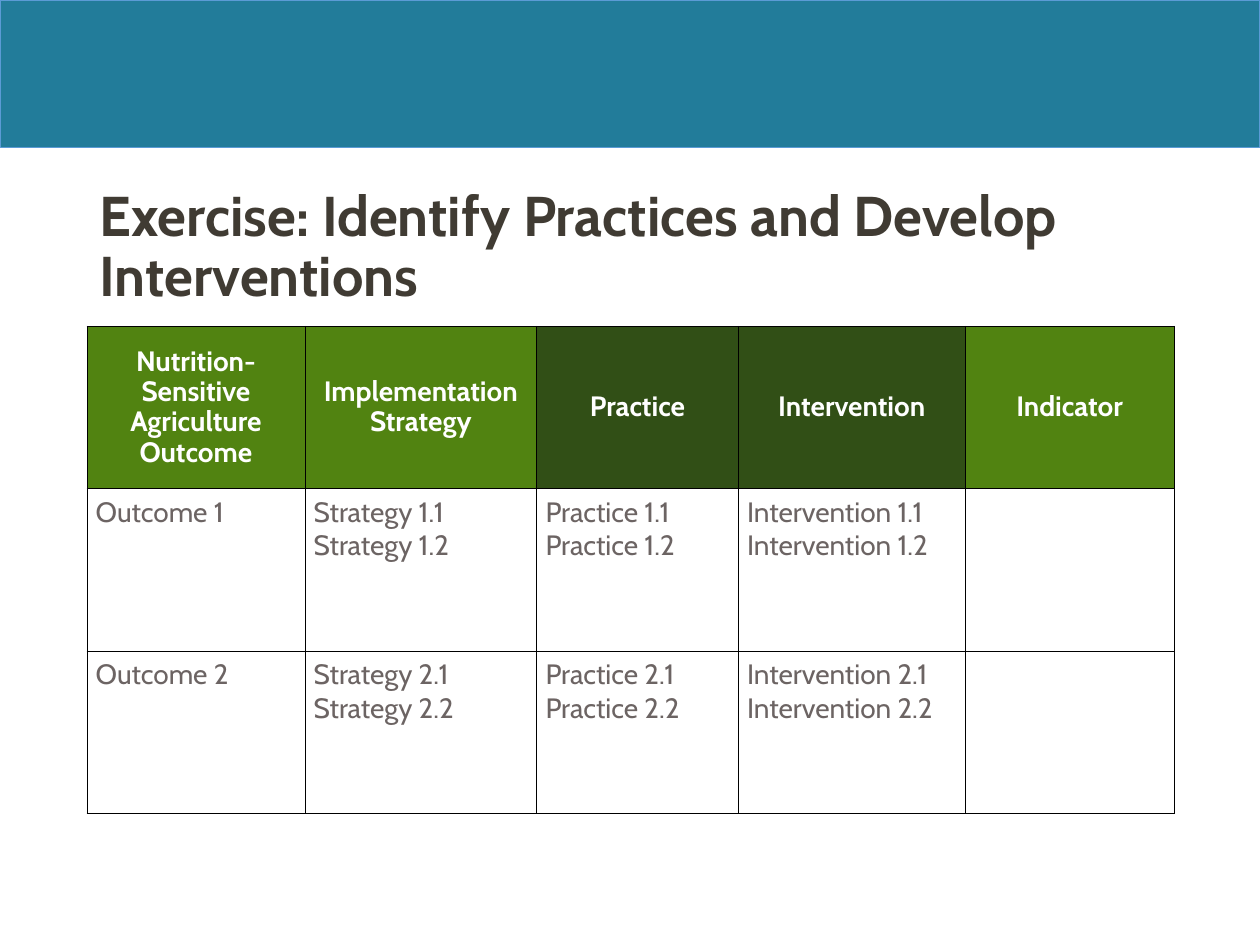
from lxml import etree
from pptx import Presentation
from pptx.dml.color import RGBColor
from pptx.enum.shapes import MSO_SHAPE
from pptx.enum.text import MSO_ANCHOR, MSO_AUTO_SIZE, PP_ALIGN
from pptx.oxml.ns import qn
from pptx.util import Inches, Pt

RECTANGLE = MSO_SHAPE.RECTANGLE
MIDDLE, TOP = MSO_ANCHOR.MIDDLE, MSO_ANCHOR.TOP
LEFT, CENTER = PP_ALIGN.LEFT, PP_ALIGN.CENTER
NO_AUTOFIT = MSO_AUTO_SIZE.NONE

FONT = "Cabin"
COLORS = {
    "banner": "227C9A",
    "banner_line": "5B9BD5",
    "title": "403B33",
    "header": "518311",
    "header_focus": "314F16",
    "header_text": "FFFFFF",
    "body_text": "6C6463",
    "border": "000000",
}
COLUMNS = [
    ("Nutrition-Sensitive Agriculture Outcome", 1.73, "header"),
    ("Implementation Strategy", 1.84, "header"),
    ("Practice", 1.6, "header_focus"),
    ("Intervention", 1.8, "header_focus"),
    ("Indicator", 1.66, "header"),
]
ROW_HEIGHT = 1.29
OUTCOMES = (1, 2)
NUMBERED_ITEMS = ("Strategy", "Practice", "Intervention")


def rgb(name):
    return RGBColor.from_string(COLORS[name])


def write_text(frame, text, *, size, color, bold=False, align=LEFT, spacing=1.0):
    frame.text = text
    for paragraph in frame.paragraphs:
        paragraph.alignment = align
        paragraph.line_spacing = spacing
        paragraph.space_before = Pt(0)
        font = paragraph.font
        font.name, font.size, font.bold = FONT, Pt(size), bold
        font.color.rgb = rgb(color)


def add_banner(slide):
    banner = slide.shapes.add_shape(RECTANGLE, 0, 0, Inches(10), Inches(1.17))
    banner.shadow.inherit = False
    banner.fill.solid()
    banner.fill.fore_color.rgb = rgb("banner")
    banner.line.color.rgb = rgb("banner_line")
    banner.line.width = Pt(0.5)


def format_title(slide):
    title = slide.shapes.title
    title.left, title.top = Inches(0.69), Inches(1.37)
    title.width, title.height = Inches(8.62), Inches(1.2)
    frame = title.text_frame
    frame.word_wrap = True
    frame.auto_size = NO_AUTOFIT
    frame.vertical_anchor = MIDDLE
    write_text(frame, "Exercise: Identify Practices and Develop Interventions",
               size=32, color="title", bold=True, spacing=0.9)


def add_borders(cell):
    properties = cell._tc.get_or_add_tcPr()
    for side in ("lnL", "lnR", "lnT", "lnB"):
        border = etree.SubElement(properties, qn(f"a:{side}"), w=str(Pt(0.5)))
        fill = etree.SubElement(border, qn("a:solidFill"))
        etree.SubElement(fill, qn("a:srgbClr"), val=COLORS["border"])


def format_cell(cell, text, *, fill=None, anchor=TOP, **text_format):
    cell.margin_left = cell.margin_right = Inches(0.07)
    cell.margin_top = cell.margin_bottom = Inches(0.05)
    cell.vertical_anchor = anchor
    add_borders(cell)
    if fill:
        cell.fill.solid()
        cell.fill.fore_color.rgb = rgb(fill)
    else:
        cell.fill.background()
    write_text(cell.text_frame, text, size=16, **text_format)


def outcome_row(number):
    items = [f"{item} {number}.1\n{item} {number}.2" for item in NUMBERED_ITEMS]
    return [f"Outcome {number}", *items, ""]


def add_exercise_table(slide):
    row_count = len(OUTCOMES) + 1
    total_width = sum(width for _, width, _ in COLUMNS)
    table = slide.shapes.add_table(
        row_count, len(COLUMNS), Inches(0.69), Inches(2.59),
        Inches(total_width), Inches(ROW_HEIGHT * row_count)).table
    for row in table.rows:
        row.height = Inches(ROW_HEIGHT)
    for index, (heading, width, fill) in enumerate(COLUMNS):
        table.columns[index].width = Inches(width)
        format_cell(table.cell(0, index), heading, fill=fill, anchor=MIDDLE,
                    color="header_text", bold=True, align=CENTER, spacing=0.9)
    for row_index, number in enumerate(OUTCOMES, start=1):
        for index, text in enumerate(outcome_row(number)):
            format_cell(table.cell(row_index, index), text, color="body_text")


def main():
    presentation = Presentation()
    presentation.slide_width = Inches(10)
    presentation.slide_height = Inches(7.5)
    slide = presentation.slides.add_slide(presentation.slide_layouts[5])
    add_banner(slide)
    add_exercise_table(slide)
    format_title(slide)
    presentation.save("out.pptx")


if __name__ == "__main__":
    main()
